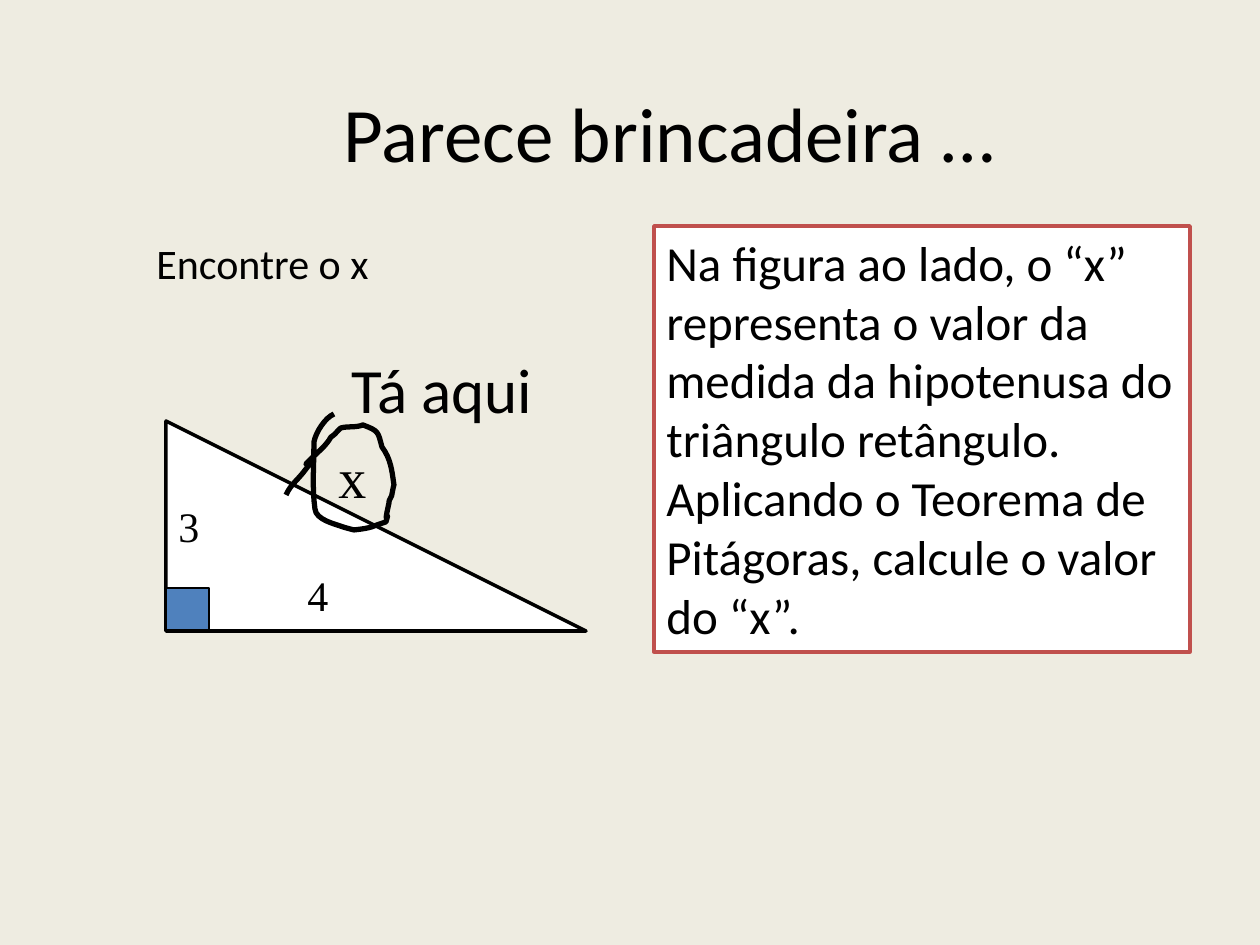
from pptx import Presentation
from pptx.dml.color import RGBColor
from pptx.enum.shapes import MSO_SHAPE
from pptx.enum.text import MSO_ANCHOR, PP_ALIGN
from pptx.util import Pt

RECT, TRI = MSO_SHAPE.RECTANGLE, MSO_SHAPE.RIGHT_TRIANGLE
TOP, MID = MSO_ANCHOR.TOP, MSO_ANCHOR.MIDDLE
LEFT, MIDST = PP_ALIGN.LEFT, PP_ALIGN.CENTER
SCALE = 914400 / 126  # EMU in one px
STEPS = 8  # straight pieces per curve
SANS, SERIF = "Calibri", "Times New Roman"
HUES = {"back": "EEECE1", "ink": "000000", "white": "FFFFFF",
        "red": "C0504D", "blue": "4F81BD"}

# Text, box, size, font
LABELS = [
    ("x", (326, 436, 63, 81), 32, SERIF),
    ("3", (166, 494, 55, 63), 24, SERIF),
    ("4", (295, 563, 63, 63), 24, SERIF),
    ("Tá aqui", (339, 344, 248, 89), 36, SANS),
    ("Encontre o x", (144, 231, 328, 63), 24, SANS),
]
TASK = ("Na figura ao lado, o “x” representa o valor da medida da hipotenusa "
        "do triângulo retângulo. Aplicando o Teorema de Pitágoras, calcule o "
        "valor do “x”.")

# Hand-drawn loop: start, then two handles and an end for each curve
START = (334, 414)
CURVES = [
    ((325, 418), (316, 432), (314, 442)),
    ((314, 465), (312, 488), (315, 509)),
    ((316, 520), (335, 524), (343, 527)),
    ((346, 528), (354, 530), (354, 530)),
    ((373, 528), (370, 527), (386, 522)),
    ((391, 505), (382, 534), (389, 503)),
    ((389, 499), (392, 497), (392, 494)),
    ((393, 490), (393, 488), (394, 485)),
    ((392, 471), (391, 459), (382, 447)),
    ((378, 432), (379, 431), (363, 425)),
    ((355, 428), (348, 426), (341, 428)),
    ((338, 430), (335, 435), (331, 437)),
    ((326, 446), (319, 451), (311, 459)),
    ((297, 472), (318, 455), (306, 469)),
    ((299, 479), (291, 484), (286, 495)),
]


def px(n):
    return round(n * SCALE)


def hue(name):
    return RGBColor.from_string(HUES[name])


def paint(shape, fill, line, width):
    shape.shadow.inherit = False
    if fill:
        shape.fill.solid()
        shape.fill.fore_color.rgb = hue(fill)
    else:
        shape.fill.background()
    shape.line.color.rgb = hue(line)
    shape.line.width = Pt(width)


def write(shape, text, size, face, align=LEFT, anchor=TOP):
    frame = shape.text_frame
    frame.word_wrap = True
    frame.vertical_anchor = anchor
    para = frame.paragraphs[0]
    para.alignment = align
    run = para.add_run()
    run.text = text
    for key, val in {"size": Pt(size), "name": face}.items():
        setattr(run.font, key, val)
    run.font.color.rgb = hue("ink")


def block(slide, kind, box, fill, line, width):
    shape = slide.shapes.add_shape(kind, *map(px, box))
    paint(shape, fill, line, width)
    return shape


def label(slide, text, box, *look):
    write(slide.shapes.add_textbox(*map(px, box)), text, *look)


def bend(a, b, c, d):
    """Points along one cubic curve, without its start."""
    for i in range(1, STEPS + 1):
        t = i / STEPS
        u = 1 - t
        yield tuple(u**3 * p + 3 * u * u * t * q + 3 * u * t * t * r + t**3 * s
                    for p, q, r, s in zip(a, b, c, d))


def scrawl(slide, start, curves, width):
    dots, pen = [], start
    for one, two, end in curves:
        dots += bend(pen, one, two, end)
        pen = end
    form = slide.shapes.build_freeform(*map(px, start))
    form.add_line_segments([(px(x), px(y)) for x, y in dots], close=False)
    paint(form.convert_to_shape(), None, "ink", width)


def main():
    deck = Presentation()
    deck.slide_width, deck.slide_height = px(1260), px(945)
    slide = deck.slides.add_slide(deck.slide_layouts[6])
    slide.background.fill.solid()
    slide.background.fill.fore_color.rgb = hue("back")

    # Triangle and its right-angle mark
    block(slide, TRI, (166, 421, 420, 210), "white", "ink", 2)
    block(slide, RECT, (166, 588, 43, 42), "blue", "ink", 1)

    # Title and labels
    label(slide, "Parece brincadeira …", (260, 37, 819, 189), 44, SANS,
          MIDST, MID)
    for item in LABELS:
        label(slide, *item)

    # Task box
    task = block(slide, RECT, (654, 226, 536, 426), "white", "red", 2)
    write(task, TASK, 28, SANS)

    # Loop around the x
    scrawl(slide, START, CURVES, 3)
    deck.save("out.pptx")


if __name__ == "__main__":
    main()
